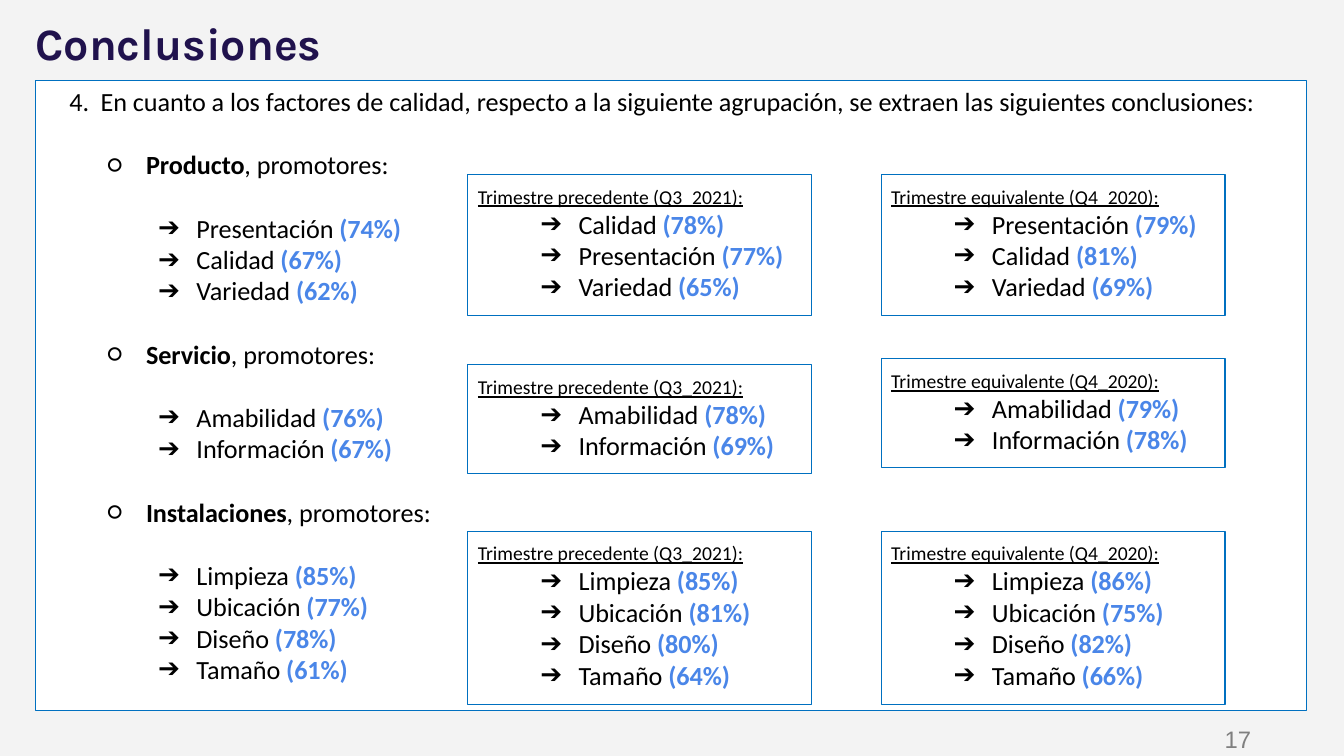
"""Build the conclusions slide comparing promoter scores by quarter."""
from lxml import etree
from pptx import Presentation, util as u
from pptx.dml.color import RGBColor
from pptx.enum import shapes, text
from pptx.oxml import ns

TITLE = "Conclusiones"
NUM = "4."
LEAD = ("En cuanto a los factores de calidad, respecto a la siguiente agrupación, "
        "se extraen las siguientes conclusiones:")
PAGE = "17"
TAIL = ", promotores:"
GROUPS = [
    ("Producto", [("Presentación", 74), ("Calidad", 67), ("Variedad", 62)]),
    ("Servicio", [("Amabilidad", 76), ("Información", 67)]),
    ("Instalaciones", [("Limpieza", 85), ("Ubicación", 77), ("Diseño", 78), ("Tamaño", 61)]),
]
CARDS = [
    ("Trimestre precedente (Q3_2021):", 4.64, [
        (1.73, [("Calidad", 78), ("Presentación", 77), ("Variedad", 65)]),
        (3.62, [("Amabilidad", 78), ("Información", 69)]),
        (5.27, [("Limpieza", 85), ("Ubicación", 81), ("Diseño", 80), ("Tamaño", 64)]),
    ]),
    ("Trimestre equivalente (Q4_2020):", 8.74, [
        (1.73, [("Presentación", 79), ("Calidad", 81), ("Variedad", 69)]),
        (3.56, [("Amabilidad", 79), ("Información", 78)]),
        (5.27, [("Limpieza", 86), ("Ubicación", 75), ("Diseño", 82), ("Tamaño", 66)]),
    ]),
]

BLACK = RGBColor(0x00, 0x00, 0x00)
WHITE = RGBColor(0xFF, 0xFF, 0xFF)
PAPER = RGBColor(0xF3, 0xF3, 0xF3)
NAVY = RGBColor(0x20, 0x12, 0x4D)
EDGE = RGBColor(0x00, 0x70, 0xC0)
BLUE = RGBColor(0x4A, 0x86, 0xE8)
GRAY = RGBColor(0x7F, 0x7F, 0x7F)
BODY = 18.67
GAP = 22.8
HANG = 0.38
LEFT = text.PP_ALIGN.LEFT
RIGHT = text.PP_ALIGN.RIGHT
EVEN = text.PP_ALIGN.JUSTIFY


def add_run(para, words, size=BODY, color=BLACK, bold=False, face="Calibri"):
    run = para.add_run()
    run.text = words
    font = run.font
    font.size, font.name, font.bold = u.Pt(size), face, bold
    font.color.rgb = color
    return run


def indent(para, left, first, mark=None):
    para.alignment = EVEN
    props = para._p.get_or_add_pPr()
    props.set("marL", str(u.Inches(left)))
    props.set("indent", str(u.Inches(first)))
    if mark:
        tint = etree.SubElement(props, ns.qn("a:buClr"))
        etree.SubElement(tint, ns.qn("a:srgbClr")).set("val", str(BLACK))
        etree.SubElement(props, ns.qn("a:buFont")).set("typeface", "Calibri")
        etree.SubElement(props, ns.qn("a:buChar")).set("char", mark)


def set_frame(shape, pads, anchor):
    frame = shape.text_frame
    frame.word_wrap = True
    frame.vertical_anchor = anchor
    wide, high = map(u.Inches, pads)
    frame.margin_left = frame.margin_right = wide
    frame.margin_top = frame.margin_bottom = high
    return frame


def add_label(slide, box, pads, align, words, **style):
    label = slide.shapes.add_textbox(*map(u.Inches, box))
    para = set_frame(label, pads, text.MSO_ANCHOR.MIDDLE).paragraphs[0]
    para.alignment = align
    add_run(para, words, **style)


def add_panel(slide, box, pads):
    panel = slide.shapes.add_shape(shapes.MSO_SHAPE.RECTANGLE, *map(u.Inches, box))
    panel.shadow.inherit = False
    panel.fill.solid()
    panel.fill.fore_color.rgb = WHITE
    panel.line.color.rgb = EDGE
    panel.line.width = u.Pt(0.75)
    return set_frame(panel, pads, text.MSO_ANCHOR.TOP)


def add_scores(frame, scores, left, gap=0):
    for row, (name, score) in enumerate(scores):
        para = frame.add_paragraph()
        indent(para, left, -HANG, "➔")
        if gap and row == 0:
            para.space_before = u.Pt(gap)
        add_run(para, name + " ")
        add_run(para, f"({score}%)", color=BLUE, bold=True)


def add_main(slide):
    frame = add_panel(slide, (0.35, 0.8, 12.61, 6.25), (0.1, 0.05))
    para = frame.paragraphs[0]
    indent(para, 0.55, -0.31)
    add_run(para, NUM + "\t" + LEAD)
    for name, scores in GROUPS:
        para = frame.add_paragraph()
        para.level = 1
        indent(para, 1, -HANG, "○")
        para.space_before = u.Pt(GAP)
        add_run(para, name, bold=True)
        add_run(para, TAIL)
        add_scores(frame, scores, 1.5, GAP)


def add_card(slide, head, left, top, scores):
    high = 0.44 + 0.32 * len(scores)
    frame = add_panel(slide, (left, top, 3.41, high), (0.1, 0.1))
    frame.auto_size = text.MSO_AUTO_SIZE.SHAPE_TO_FIT_TEXT
    para = frame.paragraphs[0]
    para.alignment = LEFT
    add_run(para, head, size=14).font.underline = True
    add_scores(frame, scores, 1)


def main():
    deck = Presentation()
    deck.slide_width, deck.slide_height = u.Inches(13.33), u.Inches(7.5)
    slide = deck.slides.add_slide(deck.slide_layouts[6])
    slide.background.fill.solid()
    slide.background.fill.fore_color.rgb = PAPER
    add_label(slide, (0.35, 0, 12.61, 0.84), (0, 0), LEFT, TITLE,
              size=32, color=NAVY, bold=True, face="Karla")
    add_main(slide)
    add_label(slide, (9.42, 7.13, 3.11, 0.4), (0.12, 0.06), RIGHT, PAGE,
              size=17, color=GRAY, face="Arial")
    for head, left, cards in CARDS:
        for top, scores in cards:
            add_card(slide, head, left, top, scores)
    deck.save("out.pptx")


if __name__ == "__main__":
    main()
